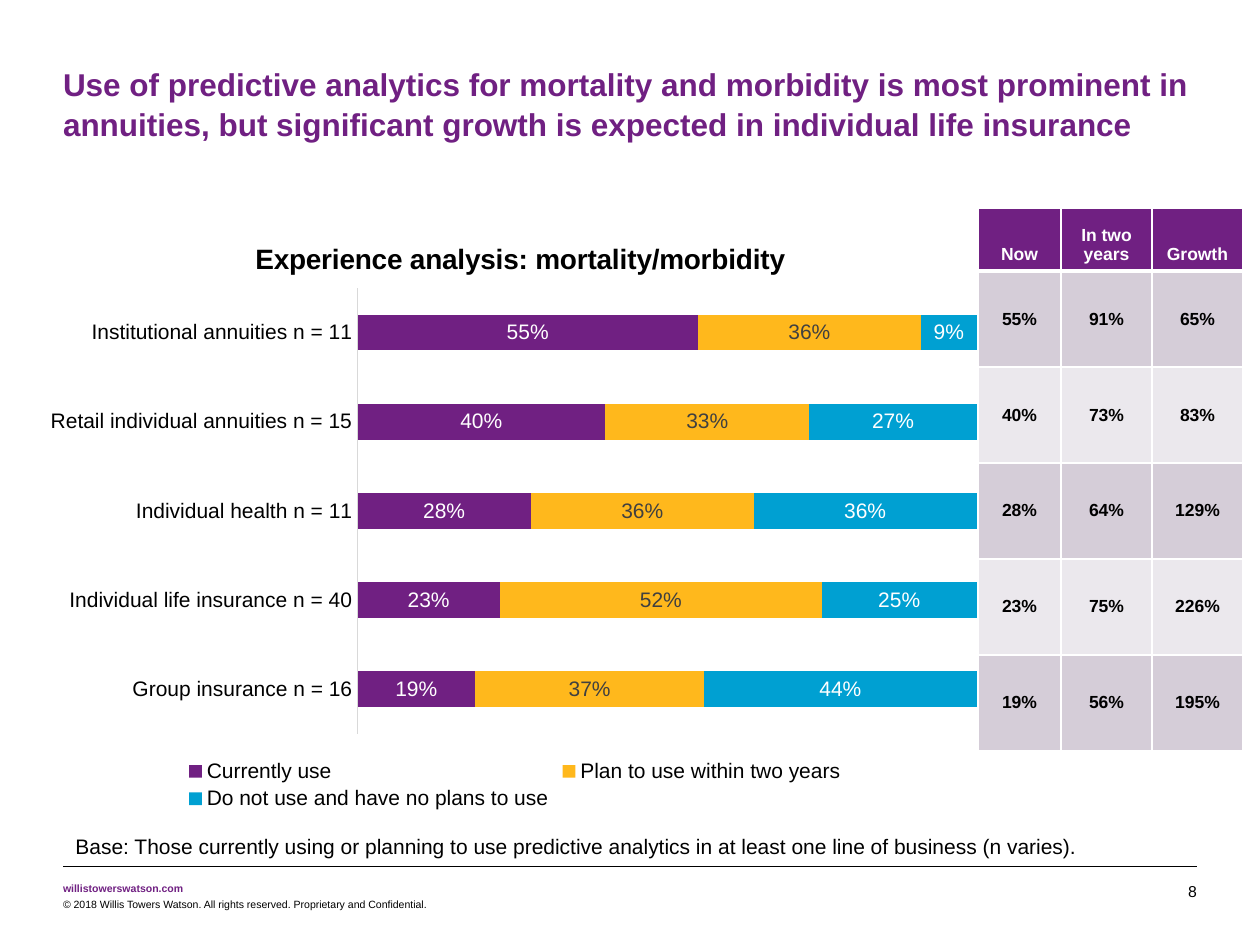
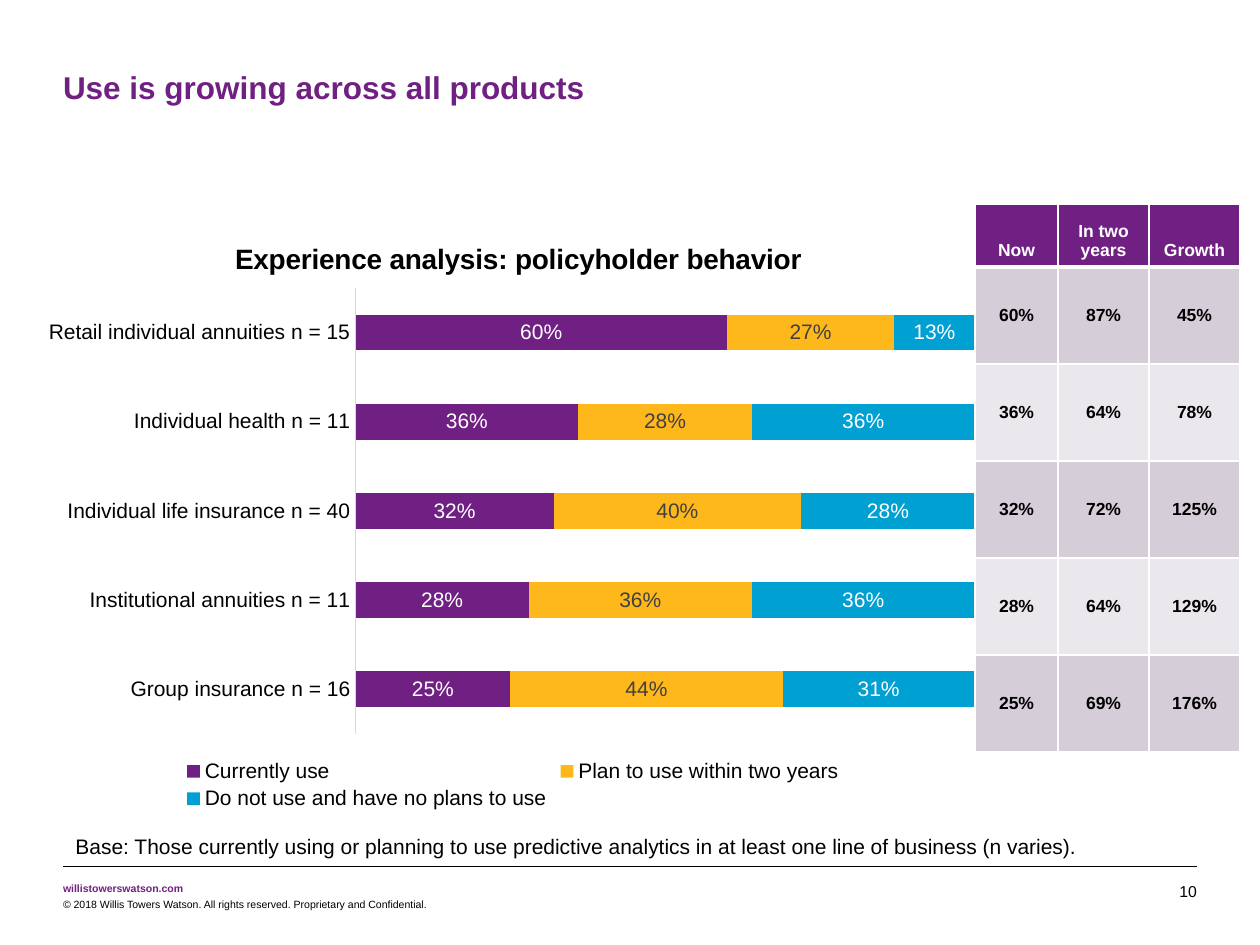
from lxml import etree
from pptx import Presentation
from pptx import util as u
from pptx.chart.data import CategoryChartData
from pptx.dml.color import RGBColor
from pptx.enum import chart as ch, shapes, text
from pptx.oxml import parse_xml
from pptx.oxml.ns import nsdecls, qn

PURPLE = RGBColor(0x70, 0x20, 0x82)
GOLD = RGBColor(0xFF, 0xB8, 0x1C)
BLUE = RGBColor(0x00, 0xA0, 0xD2)
BLACK = RGBColor(0x00, 0x00, 0x00)
WHITE = RGBColor(0xFF, 0xFF, 0xFF)
DARK_GREY = RGBColor(0x40, 0x40, 0x40)
AXIS_GREY = RGBColor(0xD9, 0xD9, 0xD9)
BANDS = (RGBColor(0xD5, 0xCD, 0xD8), RGBColor(0xEB, 0xE8, 0xED))

FONT = "Arial"
EMU_PER_PX = 914400 / 126
MARGIN, CONTENT_W = 63, 1134
CHART_Y, CHART_W, CHART_H = 210, 966, 605
PLOT = (326, 78, 619, 446)  # x, y, w, h inside the chart
COL_WIDTHS = (83, 91, 91)
HEADER_H = 63

# Name, bar colour and label colour of each series
SERIES = (
    ("Currently use", PURPLE, WHITE),
    ("Plan to use within two years", GOLD, DARK_GREY),
    ("Do not use and have no plans to use", BLUE, WHITE),
)
HEADERS = ("Now", "In two years", "Growth")
BASE = ("Base: Those currently using or planning to use predictive analytics "
        "in at least one line of business (n varies).")
SITE = "willistowerswatson.com"
RIGHTS = "© 2018 Willis Towers Watson. All rights reserved. Proprietary and Confidential."

INSTITUTIONAL = "Institutional annuities n = 11"
RETAIL = "Retail individual annuities n = 15"
HEALTH = "Individual health n = 11"
LIFE = "Individual life insurance n = 40"
GROUP = "Group insurance n = 16"

# Rows hold: line of business, percent using now, percent planning to use
SLIDES = (
    dict(title="Use of predictive analytics for mortality and morbidity is most prominent in "
               "annuities, but significant growth is expected in individual life insurance",
         title_y=63, page="8",
         chart_title="Experience analysis: mortality/morbidity", chart_x=32, chart_title_x=218,
         table_x=978, table_y=208, row_h=96,
         rows=((INSTITUTIONAL, 55, 36), (RETAIL, 40, 33), (HEALTH, 28, 36),
               (LIFE, 23, 52), (GROUP, 19, 37))),
    dict(title="Use is growing across all products", title_y=66, page="10",
         chart_title="Experience analysis: policyholder behavior", chart_x=30, chart_title_x=200,
         table_x=975, table_y=204, row_h=97,
         rows=((RETAIL, 60, 27), (HEALTH, 36, 28), (LIFE, 32, 40),
               (INSTITUTIONAL, 28, 36), (GROUP, 25, 44))),
)


def px(n):
    return u.Emu(round(n * EMU_PER_PX))


def style_font(font, size, color=BLACK, bold=False):
    font.name, font.size, font.bold = FONT, u.Pt(size), bold
    font.color.rgb = color


def fill_frame(tf, words, size, color=BLACK, bold=False, align=text.PP_ALIGN.LEFT):
    tf.text = words
    p = tf.paragraphs[0]
    p.alignment = align
    for r in p.runs:
        style_font(r.font, size, color, bold)
    return p


def clear_insets(tf):
    tf.margin_left = tf.margin_right = tf.margin_top = tf.margin_bottom = 0


def add_title(s, words, y):
    sp = s.shapes.title
    sp.left, sp.top, sp.width, sp.height = px(MARGIN), px(y), px(CONTENT_W), px(40)
    tf = sp.text_frame
    clear_insets(tf)
    tf.auto_size = text.MSO_AUTO_SIZE.NONE
    tf.vertical_anchor = text.MSO_ANCHOR.TOP
    fill_frame(tf, words, 18, PURPLE, True).line_spacing = 1.05


def add_text(s, x, y, w, h, words, size, color=BLACK, bold=False,
             align=text.PP_ALIGN.LEFT, wrap=True, insets=False):
    tf = s.shapes.add_textbox(px(x), px(y), px(w), px(h)).text_frame
    tf.word_wrap = wrap
    if not insets:
        clear_insets(tf)
    fill_frame(tf, words, size, color, bold, align)


def add_rule(s, y):
    line = s.shapes.add_connector(shapes.MSO_CONNECTOR.STRAIGHT,
                                  px(MARGIN), px(y), px(MARGIN + CONTENT_W), px(y))
    line.line.color.rgb = BLACK
    line.line.width = u.Pt(0.25)
    etree.SubElement(line._element.spPr, qn("a:effectLst"))


def add_footer(s, page):
    add_text(s, MARGIN, 827, 1028, 38, BASE, 12, wrap=False, insets=True)
    add_rule(s, 866)
    add_text(s, MARGIN, 882, 121, 13, SITE, 6, PURPLE, True, wrap=False)
    add_text(s, MARGIN, 898, 727, 13, RIGHTS, 6)
    add_text(s, 1144, 882, 53, 19, page, 9, align=text.PP_ALIGN.RIGHT)


def manual_layout(x, y, w=None, h=None):
    """Place a chart part; px inside the chart become fractions of it."""
    parts = ['<c:layoutTarget val="inner"/>'] if w else []
    parts += ['<c:xMode val="edge"/>', '<c:yMode val="edge"/>']
    for tag, value, whole in (("x", x, CHART_W), ("y", y, CHART_H),
                              ("w", w, CHART_W), ("h", h, CHART_H)):
        if value is not None:
            parts.append(f'<c:{tag} val="{value / whole:.3f}"/>')
    return parse_xml(f'<c:layout {nsdecls("c")}><c:manualLayout>{"".join(parts)}'
                     '</c:manualLayout></c:layout>')


def set_layout(parent, layout, index):
    for old in parent.findall(qn("c:layout")):
        parent.remove(old)
    parent.insert(index, layout)


def add_usage_chart(s, x, title, title_x, rows):
    data = CategoryChartData(number_format="0%")
    data.categories = [name for name, _, _ in rows]
    shares = [(now, plan, 100 - now - plan) for _, now, plan in rows]
    for (name, _, _), values in zip(SERIES, zip(*shares)):
        data.add_series(name, [v / 100 for v in values])
    chart = s.shapes.add_chart(ch.XL_CHART_TYPE.BAR_STACKED_100, px(x), px(CHART_Y),
                               px(CHART_W), px(CHART_H), data).chart
    style_font(chart.font, 10)

    # Title and legend
    chart.has_title = True
    fill_frame(chart.chart_title.text_frame, title, 16, BLACK, True, text.PP_ALIGN.CENTER)
    chart.chart_title.include_in_layout = False
    set_layout(chart.chart_title._element, manual_layout(title_x, 26), 1)
    chart.has_legend = True
    chart.legend.position = ch.XL_LEGEND_POSITION.BOTTOM
    chart.legend.include_in_layout = False
    style_font(chart.legend.font, 12)

    # Axes
    axis = chart.category_axis
    axis.reverse_order = True
    axis.major_tick_mark = axis.minor_tick_mark = ch.XL_TICK_MARK.NONE
    axis.format.line.color.rgb = AXIS_GREY
    axis.format.line.width = u.Pt(0.75)
    style_font(axis.tick_labels.font, 12)
    scale = chart.value_axis
    scale.minimum_scale, scale.maximum_scale = 0, 1
    scale.has_major_gridlines = False
    scale.visible = False

    # Bars
    plot = chart.plots[0]
    plot.gap_width, plot.overlap = 150, 100
    plot.vary_by_categories = False
    for series, (_, color, label_color) in zip(plot.series, SERIES):
        series.format.fill.solid()
        series.format.fill.fore_color.rgb = color
        labels = series.data_labels
        labels.show_value = True
        labels.number_format, labels.number_format_is_linked = "0%", False
        labels.position = ch.XL_LABEL_POSITION.CENTER
        style_font(labels.font, 12, label_color)
    set_layout(chart._chartSpace.chart.plotArea, manual_layout(*PLOT), 0)


def set_borders(cell, **widths):
    tcPr = cell._tc.get_or_add_tcPr()
    for i, side in enumerate("LRTB"):
        width = u.Pt(widths.get(side, 1))
        tcPr.insert(i, parse_xml(
            f'<a:ln{side} {nsdecls("a")} w="{width}"><a:solidFill>'
            f'<a:srgbClr val="{WHITE}"/></a:solidFill></a:ln{side}>'))


def fill_cell(cell, words, color, fill, anchor, **borders):
    fill_frame(cell.text_frame, words, 10, color, True, text.PP_ALIGN.CENTER)
    cell.vertical_anchor = anchor
    cell.fill.solid()
    cell.fill.fore_color.rgb = fill
    set_borders(cell, **borders)


def add_growth_table(s, x, y, row_h, rows):
    heights = [HEADER_H] + [row_h] * len(rows)
    table = s.shapes.add_table(len(heights), len(HEADERS), px(x), px(y),
                               px(sum(COL_WIDTHS)), px(sum(heights))).table
    for column, width in zip(table.columns, COL_WIDTHS):
        column.width = px(width)
    for row, height in zip(table.rows, heights):
        row.height = px(height)
    for c, header in enumerate(HEADERS):
        fill_cell(table.cell(0, c), header, WHITE, PURPLE, text.MSO_ANCHOR.BOTTOM, B=3)
    for i, (_, now, plan) in enumerate(rows):
        growth = int(100 * plan / now + 0.5)
        for c, value in enumerate((now, now + plan, growth)):
            fill_cell(table.cell(i + 1, c), f"{value}%", BLACK, BANDS[i % 2],
                      text.MSO_ANCHOR.MIDDLE, T=1 if i else 3)


def main():
    prs = Presentation()
    prs.slide_width, prs.slide_height = px(1260), px(945)
    for d in SLIDES:
        s = prs.slides.add_slide(prs.slide_layouts[5])
        add_title(s, d["title"], d["title_y"])
        add_usage_chart(s, d["chart_x"], d["chart_title"], d["chart_title_x"], d["rows"])
        add_footer(s, d["page"])
        add_growth_table(s, d["table_x"], d["table_y"], d["row_h"], d["rows"])
    prs.save("out.pptx")


if __name__ == "__main__":
    main()
